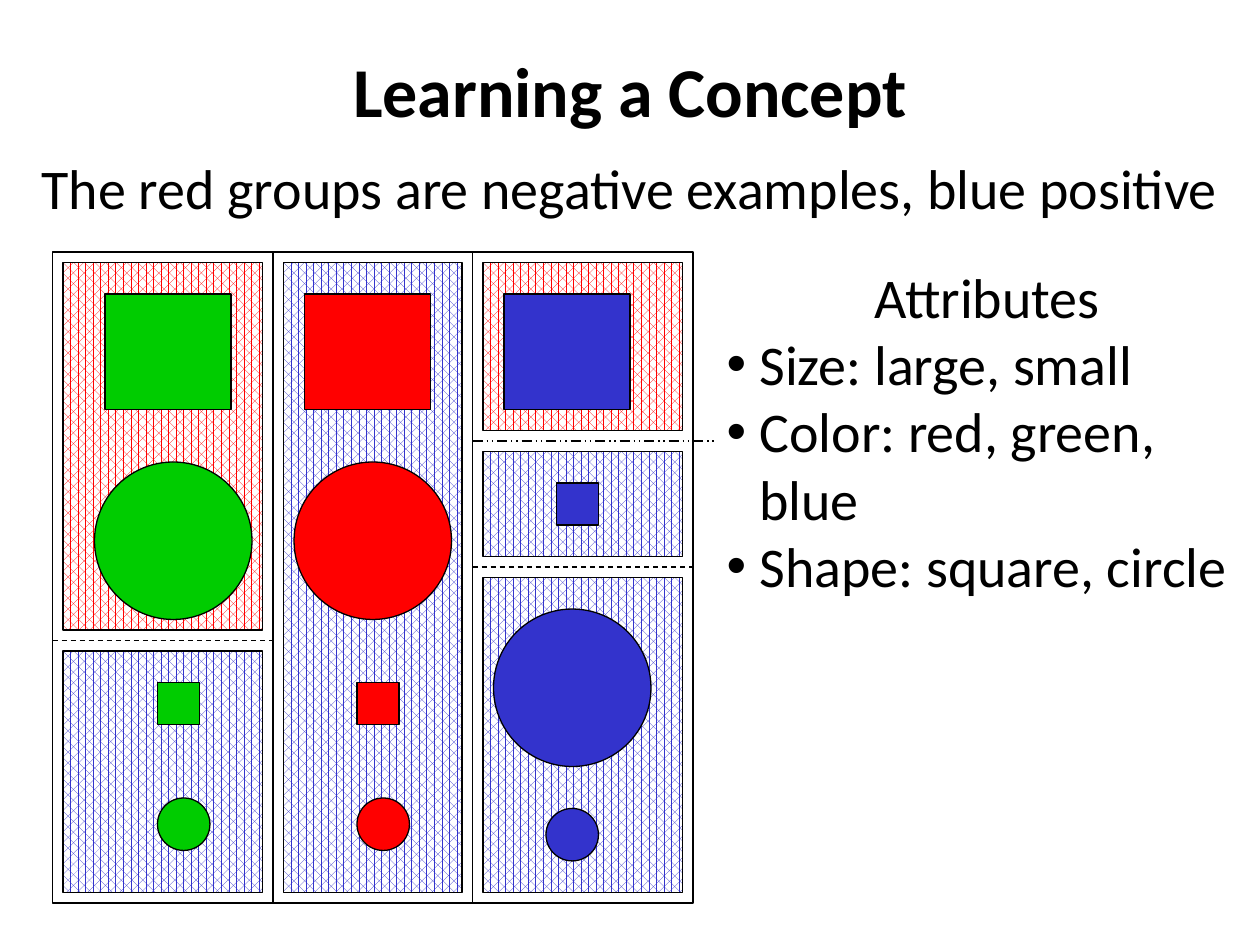
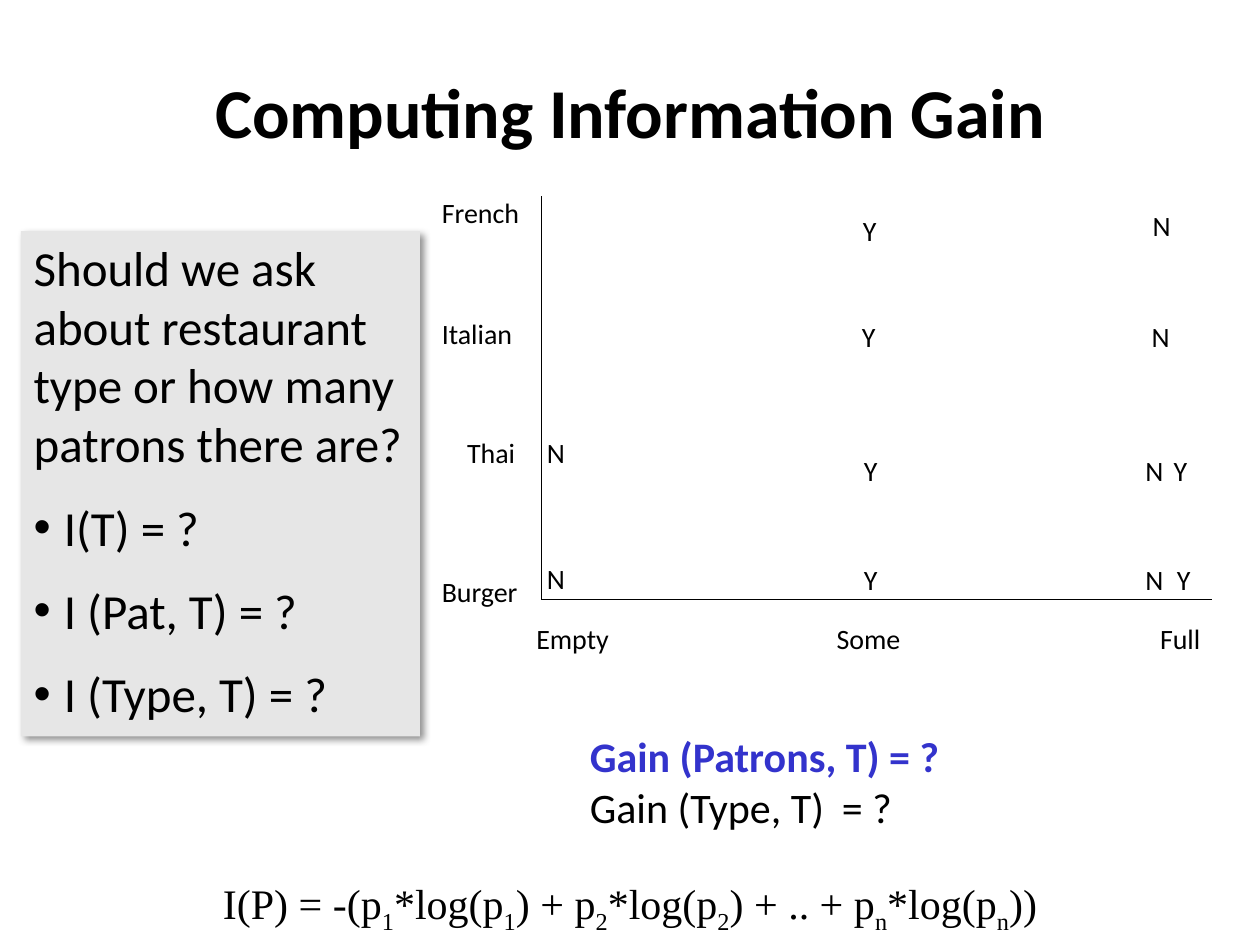
"""Build two slides on concept learning and information gain."""
from lxml.etree import SubElement
from pptx import Presentation
from pptx.dml.color import RGBColor as Rgb
from pptx.enum.dml import MSO_LINE as Dash, MSO_PATTERN as Pattern
from pptx.enum.shapes import MSO_CONNECTOR as Connector, MSO_SHAPE as Shape
from pptx.enum.text import MSO_ANCHOR as Anchor, MSO_AUTO_SIZE as Fit, PP_ALIGN as Align
from pptx.oxml.ns import qn
from pptx.util import Inches, Pt

COLOURS = {"ink": "000000", "paper": "FFFFFF", "red": "FF0000",
           "green": "00CC00", "blue": "3333CC", "panel": "E6E6E6"}
PALETTE = {name: Rgb.from_string(value) for name, value in COLOURS.items()}

deck = Presentation()
deck.slide_width, deck.slide_height = Inches(10), Inches(7.5)
COLUMNS = 120
CELL = deck.slide_width // COLUMNS


def write(holder, lines, at, size=16, font="Calibri", bold=False, align=Align.LEFT,
          wrap=True, fit=Fit.SHAPE_TO_FIT_TEXT, anchor=Anchor.TOP,
          before=0, bullets_from=None, hang=0):
    """Place and format text; parts between underscores become subscripts."""
    holder.left, holder.top, holder.width, holder.height = [round(CELL * n) for n in at]
    frame = holder.text_frame
    frame.word_wrap, frame.auto_size, frame.vertical_anchor = wrap, fit, anchor
    for row, line in enumerate(lines):
        paragraph = frame.add_paragraph() if row else frame.paragraphs[0]
        paragraph.alignment = align
        paragraph.space_before = Pt(before)
        bulleted = bullets_from is not None and row >= bullets_from
        props = paragraph._p.get_or_add_pPr()
        indent = round(CELL * hang) if bulleted else 0
        props.set("marL", str(indent))
        props.set("indent", str(-indent))
        if bulleted:
            SubElement(props, qn("a:buChar")).set("char", "•")
        else:
            SubElement(props, qn("a:buNone"))
        for order, part in enumerate(line.split("_")):
            run = paragraph.add_run()
            run.text = part
            run.font.name, run.font.size, run.font.bold = font, Pt(size), bold
            run.font.color.rgb = PALETTE["ink"]
            if order % 2:
                run._r.get_or_add_rPr().set("baseline", "-25000")
    return frame


def rule(shapes, x1, y1, x2, y2, dash=None):
    """Draw a thin line between two grid points."""
    line = shapes.add_connector(Connector.STRAIGHT,
                                *[round(CELL * n) for n in (x1, y1, x2, y2)])
    line.line.color.rgb, line.line.width = PALETTE["ink"], Pt(0.75)
    if dash:
        line.line.dash_style = dash
    SubElement(line._element.spPr, qn("a:effectLst"))


TITLE = dict(size=40, bold=True, align=Align.CENTER, fit=Fit.NONE, anchor=Anchor.MIDDLE)
title_and_list = deck.slide_layouts[1]

concept = deck.slides.add_slide(title_and_list)
write(concept.shapes.title, ["Learning a Concept"], (0, 1, COLUMNS, 15), **TITLE)
examples = concept.shapes.add_group_shape().shapes

regions = [("blue", 6, 62, 19, 23), ("blue", 46, 55, 19, 30), ("blue", 46, 43, 19, 10),
           ("blue", 27, 25, 17, 60), ("red", 46, 25, 19, 16), ("red", 6, 25, 19, 35)]
objects = []
for colour, left in (("green", 9), ("red", 28)):
    objects += [(colour, Shape.RECTANGLE, left + 1, 28, 12, 11),
                (colour, Shape.RECTANGLE, left + 6, 65, 4, 4),
                (colour, Shape.OVAL, left, 44, 15, 15),
                (colour, Shape.OVAL, left + 6, 76, 5, 5)]
objects += [("blue", Shape.RECTANGLE, 48, 28, 12, 11), ("blue", Shape.RECTANGLE, 53, 46, 4, 4),
            ("blue", Shape.OVAL, 47, 58, 15, 15), ("blue", Shape.OVAL, 52, 77, 5, 5)]
border = (None, Shape.RECTANGLE, 5, 24, 61, 62)

hatched = [(colour, Shape.RECTANGLE, *at) for colour, *at in regions]
for order, (colour, kind, *at) in enumerate(hatched + objects + [border]):
    figure = examples.add_shape(kind, *[CELL * n for n in at])
    figure.shadow.inherit = False
    figure.line.color.rgb, figure.line.width = PALETTE["ink"], Pt(0.75)
    if colour is None:
        figure.fill.background()
    elif order < len(hatched):
        figure.fill.patterned()
        figure.fill.pattern = Pattern.PERCENT_60
        figure.fill.fore_color.rgb = PALETTE[colour]
        figure.fill.back_color.rgb = PALETTE["paper"]
    else:
        figure.fill.solid()
        figure.fill.fore_color.rgb = PALETTE[colour]

for x in (26, 45):
    rule(examples, x, 24, x, 86)
for x1, x2, y, dash in ((5, 26, 61, Dash.DASH), (45, 66, 54, Dash.DASH),
                        (45, 68, 42, Dash.DASH_DOT_DOT)):
    rule(examples, x1, y, x2, y, dash)

attributes = write(concept.placeholders[1],
                   ["Attributes", "Size: large, small", "Color: red, green, blue",
                    "Shape: square, circle"],
                   (68, 24.4, 52, 33.5), size=32, bullets_from=1, hang=3.12)
attributes.paragraphs[0].alignment = Align.CENTER
write(concept.shapes.add_textbox(0, 0, 0, 0),
      ["The red groups are negative examples, blue positive"],
      (0, 14, COLUMNS, 7.7), size=32, align=Align.CENTER)

gain = deck.slides.add_slide(title_and_list)
write(gain.shapes.title, ["Computing Information Gain"], (9, 3, 102, 15), **TITLE)
origin_x, origin_y = 51.6, 57.1
rule(gain.shapes, origin_x, 18.7, origin_x, origin_y)
rule(gain.shapes, origin_x, origin_y, 115.4, origin_y)

plot_labels = [("French", 40.9, 18, 10), ("Italian", 40.9, 29.6, 9.2),
               ("Thai", 43.3, 40.9, 7.3), ("Burger", 40.9, 54.1, 9.8),
               ("Empty", 49.9, 58.6, 9.5), ("Some", 78.5, 58.6, 8.5),
               ("Full", 109.3, 58.6, 6.4)]
answers = {"Y": [(81, 19.7), (80.9, 29.8), (81.1, 42.6), (81.1, 53),
                 (110.6, 42.6), (110.9, 53)],
           "N": [(107.9, 53), (107.9, 42.6), (108.5, 29.8), (108.6, 19.3),
                 (50.9, 40.9), (50.9, 52.9)]}
answer_width = {"Y": 3.7, "N": 4.2}
plot_labels += [(answer, x, y, answer_width[answer])
                for answer, spots in answers.items() for x, y in spots]
for label, x, y, width in plot_labels:
    write(gain.shapes.add_textbox(0, 0, 0, 0), [label], (x, y, width, 4.4), wrap=False)

question = gain.placeholders[1]
write(question, ["Should we ask about restaurant type or how many patrons there are?",
                 "I(T) = ?", "I (Pat, T) = ?", "I (Type, T) = ?"],
      (2, 22, 38, 49.3), size=28, before=14, bullets_from=1, hang=2.88)
question.fill.solid()
question.fill.fore_color.rgb = PALETTE["panel"]
effects = SubElement(question._element.spPr, qn("a:effectLst"))
shadow = SubElement(effects, qn("a:outerShdw"), blurRad=str(Pt(4)), dist=str(Pt(3)),
                    dir="2700000", algn="tl", rotWithShape="0")
shade = SubElement(shadow, qn("a:srgbClr"), val=COLOURS["ink"])
SubElement(shade, qn("a:alpha"), val="43000")

results = write(gain.shapes.add_textbox(0, 0, 0, 0),
                ["Gain (Patrons, T) = ?", "Gain (Type, T)\t= ?"], (55, 69, 51, 10.9), size=24)
best = results.paragraphs[0].runs[0].font
best.bold, best.color.rgb = True, PALETTE["blue"]
stops = SubElement(results.paragraphs[1]._p.pPr, qn("a:tabLst"))
SubElement(stops, qn("a:tab"), pos=str(Inches(2.38)), algn="l")

write(gain.shapes.add_textbox(0, 0, 0, 0),
      ["I(P) = -(p_1_*log(p_1_) + p_2_*log(p_2_) + .. + p_n_*log(p_n_))"],
      (0, 83, COLUMNS, 6), size=24, font="Times New Roman", align=Align.CENTER)

deck.save("out.pptx")
